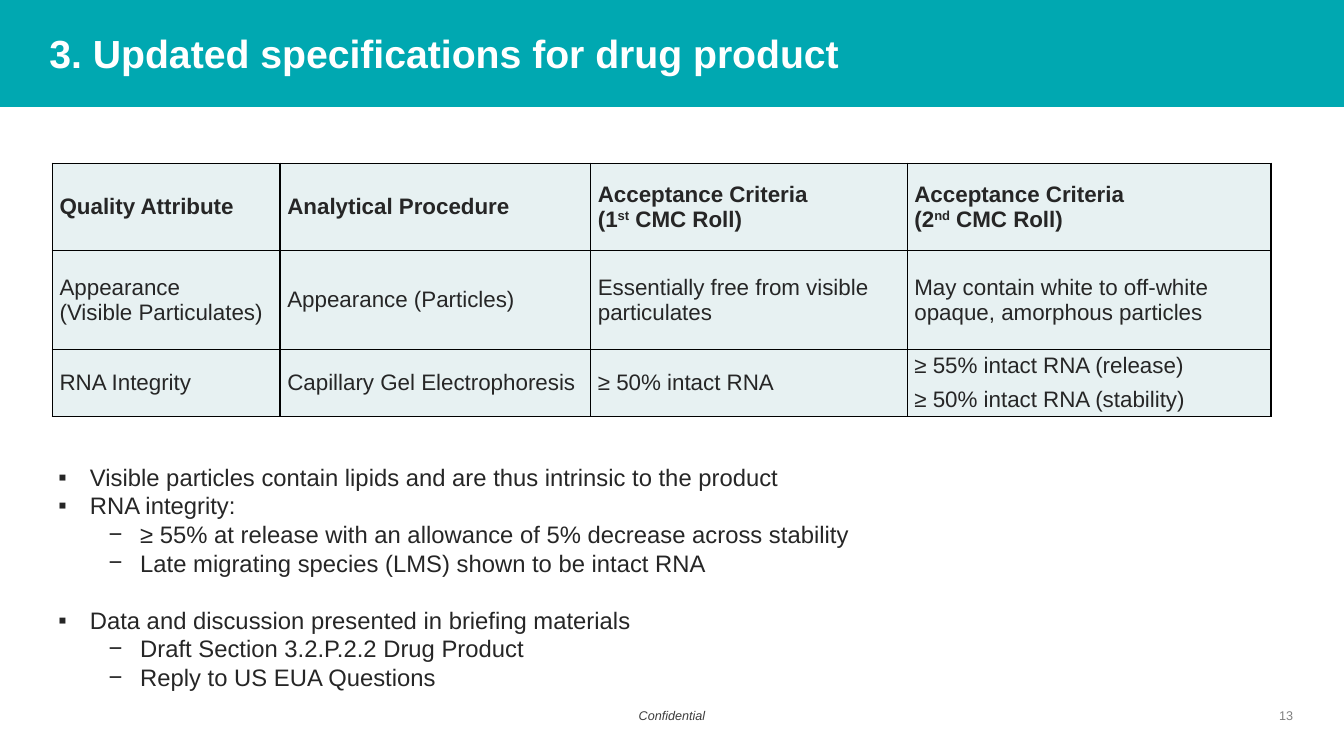
from lxml import etree
from pptx import Presentation
from pptx.dml.color import RGBColor
from pptx.enum.shapes import MSO_SHAPE
from pptx.enum.text import MSO_ANCHOR, PP_ALIGN
from pptx.oxml.ns import qn
from pptx.util import Pt

RECT = MSO_SHAPE.RECTANGLE
MID, TOP = MSO_ANCHOR.MIDDLE, MSO_ANCHOR.TOP
LEFT, RIGHT, MIDDLE = PP_ALIGN.LEFT, PP_ALIGN.RIGHT, PP_ALIGN.CENTER
FONT = "Arial"
COLORS = {
    "teal": "00A8B1", "pale": "E7F1F2", "ink": "262626", "white": "FFFFFF",
    "black": "000000", "gray": "808080", "dark": "3C3C3C",
}

# Carets enclose superscripts
ROWS = [
    ["Quality Attribute", "Analytical Procedure",
     ["Acceptance Criteria\n(1^st^ CMC Roll)"],
     ["Acceptance Criteria\n(2^nd^ CMC Roll)"]],
    [["Appearance\n(Visible Particulates)"], "Appearance (Particles)",
     "Essentially free from visible particulates",
     "May contain white to off-white opaque, amorphous particles"],
    ["RNA Integrity", "Capillary Gel Electrophoresis", "≥ 50% intact RNA",
     ["≥ 55% intact RNA (release)", "≥ 50% intact RNA (stability)"]],
]
WIDTHS = [162.7, 221.8, 226.1, 259.9]
HEIGHTS = [62.6, 70.6, 47.5]

# Level, text, space before
POINTS = [
    (0, "Visible particles contain lipids and are thus intrinsic to the product", 0),
    (0, "RNA integrity:", 0),
    (1, "≥ 55% at release with an allowance of 5% decrease across stability", 0),
    (1, "Late migrating species (LMS) shown to be intact RNA", 0),
    (0, "Data and discussion presented in briefing materials", 20.4),
    (1, "Draft Section 3.2.P.2.2 Drug Product", 0),
    (1, "Reply to US EUA Questions", 0),
]


def color(name):
    return RGBColor.from_string(COLORS[name])


def write(para, text, size=16, ink="ink", bold=False, italic=False, align=LEFT):
    """Fill a paragraph with formatted runs."""
    para.alignment = align
    for row, line in enumerate(text.split("\n")):
        if row:
            para.add_line_break()
        for part, words in enumerate(line.split("^")):
            run = para.add_run()
            run.text = words
            font = run.font
            font.name, font.size = FONT, Pt(size)
            font.bold, font.italic = bold, italic
            font.color.rgb = color(ink)
            if part % 2:
                run._r.get_or_add_rPr().set("baseline", "30000")


def add_box(slide, left, top, width, height, inset=True):
    box = slide.shapes.add_textbox(Pt(left), Pt(top), Pt(width), Pt(height))
    frame = box.text_frame
    frame.word_wrap = True
    frame.vertical_anchor = TOP
    if not inset:
        frame.margin_left = frame.margin_right = 0
        frame.margin_top = frame.margin_bottom = 0
    return frame


def add_title(slide, text):
    title = slide.shapes.title
    title.left, title.top = Pt(28.1), Pt(9.4)
    title.width, title.height = Pt(901.4), Pt(56.9)
    title.text_frame.vertical_anchor = MID
    write(title.text_frame.paragraphs[0], text, size=28, ink="white", bold=True)

    # Band behind the title
    band = slide.shapes.add_shape(RECT, 0, 0, Pt(960), Pt(76.3))
    band.shadow.inherit = False
    band.fill.solid()
    band.fill.fore_color.rgb = color("teal")
    band.line.fill.background()
    title.element.addprevious(band.element)


def add_edges(cell):
    props = cell._tc.get_or_add_tcPr()
    for index, side in enumerate(("lnL", "lnR", "lnT", "lnB")):
        edge = etree.Element(qn(f"a:{side}"), w=str(Pt(1)))
        fill = etree.SubElement(edge, qn("a:solidFill"))
        etree.SubElement(fill, qn("a:srgbClr"), val=COLORS["black"])
        props.insert(index, edge)


def fill_cell(cell, text, bold):
    cell.fill.solid()
    cell.fill.fore_color.rgb = color("pale")
    cell.vertical_anchor = MID
    cell.margin_left = cell.margin_right = Pt(5.2)
    cell.margin_top = cell.margin_bottom = 0
    add_edges(cell)
    frame = cell.text_frame
    for index, line in enumerate([text] if isinstance(text, str) else text):
        para = frame.add_paragraph() if index else frame.paragraphs[0]
        para.space_before = Pt(6 if index else 0)
        write(para, line, bold=bold)


def add_grid(slide):
    grid = slide.shapes.add_table(
        len(ROWS), len(WIDTHS), Pt(37.4), Pt(116.6),
        Pt(sum(WIDTHS)), Pt(sum(HEIGHTS))).table
    for col, width in zip(grid.columns, WIDTHS):
        col.width = Pt(width)
    for index, (row, height) in enumerate(zip(grid.rows, HEIGHTS)):
        row.height = Pt(height)
        for cell, text in zip(row.cells, ROWS[index]):
            fill_cell(cell, text, bold=index == 0)


def add_points(slide):
    frame = add_box(slide, 34.6, 326.9, 876.2, 172.1)
    for index, (level, text, gap) in enumerate(POINTS):
        para = frame.add_paragraph() if index else frame.paragraphs[0]
        para.level = level
        props = para._p.get_or_add_pPr()
        props.set("marL", str(Pt(58.5 if level else 22.5)))
        props.set("indent", str(Pt(-22.5)))
        etree.SubElement(props, qn("a:buFont"), typeface=FONT)
        etree.SubElement(props, qn("a:buChar"), char="−" if level else "▪")
        para.space_before = Pt(gap)
        write(para, text, size=17)


def add_foot(slide, left, text, **style):
    frame = add_box(slide, left, 505.4, 208, 10.8, inset=False)
    write(frame.paragraphs[0], text, size=9, **style)


def main():
    deck = Presentation()
    deck.slide_width, deck.slide_height = Pt(960), Pt(540)
    slide = deck.slides.add_slide(deck.slide_layouts[5])

    add_title(slide, "3. Updated specifications for drug product")
    add_grid(slide)
    add_points(slide)

    # Footer
    add_foot(slide, 376, "Confidential", ink="dark", italic=True, align=MIDDLE)
    add_foot(slide, 715.7, "13", ink="gray", align=RIGHT)

    deck.save("out.pptx")


if __name__ == "__main__":
    main()
